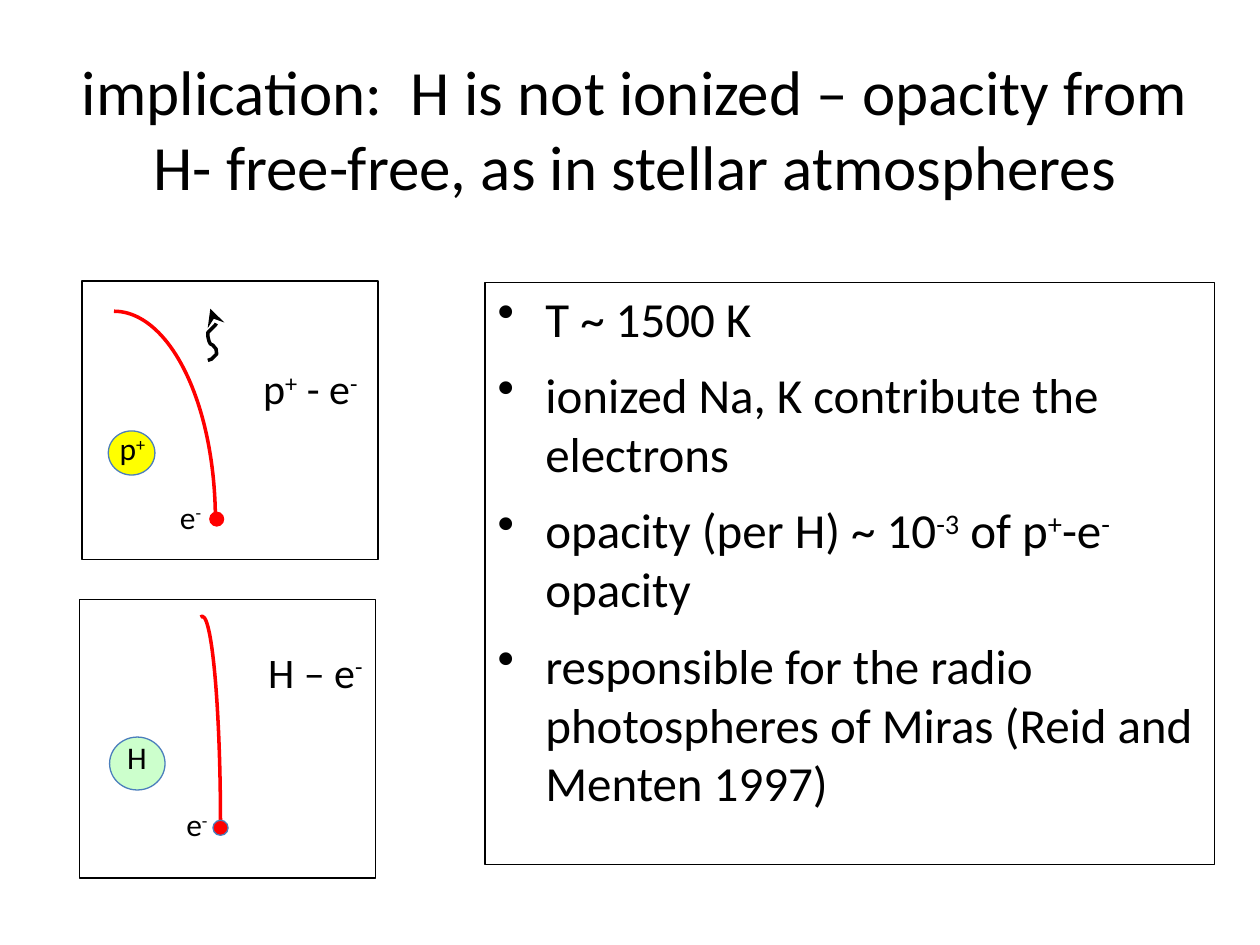
from pptx import Presentation
from pptx.dml.color import RGBColor
from pptx.enum.shapes import MSO_SHAPE as SHAPE
from pptx.enum.text import MSO_ANCHOR as ANCHOR, PP_ALIGN as ALIGN
from pptx.oxml.ns import qn
from pptx.util import Inches, Pt
from lxml.etree import SubElement

COLS, ROWS = 100, 75
BLACK, RED, YELLOW, GREEN, BLUE = "000000", "FF0000", "FFFF00", "CCFFCC", "4B7EBC"


def rgb(color):
    return RGBColor.from_string(color)


class Canvas:
    """Holds the style, the slide and the shape tree being drawn on; lengths are grid cells."""

    font = "Calibri"

    def __init__(self, prs):
        self.cell_w = prs.slide_width / COLS
        self.cell_h = prs.slide_height / ROWS
        self.slide = prs.slides.add_slide(prs.slide_layouts[6])
        self.shapes = self.slide.shapes

    def start_group(self):
        self.shapes = self.slide.shapes.add_group_shape().shapes

    def end_group(self):
        self.shapes = self.slide.shapes

    def at(self, x, y):
        return round(x * self.cell_w), round(y * self.cell_h)

    def style(self, sp, fill=None, line=None, width=0.75):
        sp.shadow.inherit = False
        if fill:
            sp.fill.solid()
            sp.fill.fore_color.rgb = rgb(fill)
        else:
            sp.fill.background()
        if line:
            sp.line.color.rgb = rgb(line)
            sp.line.width = Pt(width)
        else:
            sp.line.fill.background()
        return sp

    def shape(self, kind, box, **style):
        sp = self.shapes.add_shape(kind, *self.at(*box[:2]), *self.at(*box[2:]))
        return self.style(sp, **style)

    def arc(self, box, start, end):
        sp = self.shape(SHAPE.ARC, box, line=RED, width=2)
        sp.adjustments[0], sp.adjustments[1] = start, end

    def wave(self, points):
        """Draws an open line through the points, with a stealth arrowhead at its end."""
        first, *rest = [self.at(*point) for point in points]
        builder = self.shapes.build_freeform(*first)
        builder.add_line_segments(rest, close=False)
        sp = self.style(builder.convert_to_shape(), line=BLACK, width=2)
        ln = sp.line._get_or_add_ln()
        SubElement(ln, qn("a:tailEnd"), type="stealth", w="lg", len="lg")

    def paragraph(self, p, text, size, align=ALIGN.LEFT):
        """Fills a paragraph; every second part between ^ marks is raised."""
        p.alignment = align
        p.font.name, p.font.size = self.font, Pt(size)
        p.font.color.rgb = rgb(BLACK)
        for i, part in enumerate(text.split("^")):
            if part:
                r = p.add_run()
                r.text = part
                if i % 2:
                    r.font._element.set("baseline", "30000")

    def text(self, box, text, size, align=ALIGN.LEFT, anchor=ANCHOR.TOP):
        sp = self.shapes.add_textbox(*self.at(*box[:2]), *self.at(*box[2:]))
        tf = sp.text_frame
        tf.word_wrap, tf.vertical_anchor = True, anchor
        self.paragraph(tf.paragraphs[0], text, size, align)

    def bullets(self, box, items, size):
        sp = self.shape(SHAPE.RECTANGLE, box, line=BLACK)
        tf = sp.text_frame
        tf.word_wrap, tf.vertical_anchor = True, ANCHOR.TOP
        for i, item in enumerate(items):
            p = tf.add_paragraph() if i else tf.paragraphs[0]
            self.paragraph(p, item, size)
            p.space_before = Pt(10)
            pPr = p._p.get_or_add_pPr()
            pPr.set("marL", str(Inches(0.38)))
            pPr.set("indent", str(-Inches(0.38)))
            bullet = pPr.makeelement(qn("a:buChar"), {"char": "•"})
            pPr.find(qn("a:defRPr")).addprevious(bullet)

    def encounter(self, frame, path, nucleus, electron, labels, photon=None):
        """Draws one framed panel of an electron passing a nucleus."""
        self.arc(*path)
        self.start_group()
        for box, fill, line in (nucleus, electron):
            self.shape(SHAPE.OVAL, box, fill=fill, line=line)
        if photon:
            self.wave(photon)
        for box, text, size in labels:
            self.text(box, text, size)
        self.shape(SHAPE.RECTANGLE, frame, line=BLACK)
        self.end_group()


PHOTON = [(16.5, 28.6), (16.8, 28.5), (17.2, 28.1), (17.15, 27.7), (16.9, 27.4),
          (16.7, 27.3), (16.6, 27.1), (16.5, 26.7), (16.5, 26.4), (16.7, 26.2),
          (16.9, 26), (17.1, 25.8), (17.2, 25.6), (17.1, 25.3), (16.8, 24.9), (16.7, 24.5)]

ENCOUNTERS = [
    dict(frame=(6.5, 22.3, 23.5, 22.1),
         path=((1, 24.7, 16.1, 33.2), 162, 215.01),
         nucleus=((8.6, 34.2, 3.7, 3.5), YELLOW, BLUE),
         electron=((16.6, 40.6, 1.2, 1.2), RED, None),
         labels=[((8.5, 33.6, 4.5, 4), "p^+", 18),
                 ((13.3, 39, 3.8, 4), "e^-", 18),
                 ((19.9, 28.3, 11.3, 5), "p^+^ - e^-", 24)],
         photon=PHOTON),
    dict(frame=(6.3, 47.6, 23.5, 22.1),
         path=((14.6, 48.9, 2.9, 33.2), 161.72, 0),
         nucleus=((8.7, 58.5, 4.4, 4.2), GREEN, BLUE),
         electron=((16.9, 65.1, 1.2, 1.2), RED, BLUE),
         labels=[((9.1, 58.1, 4.5, 4), "H", 18),
                 ((13.8, 63.4, 3.8, 4), "e^-", 18),
                 ((20.3, 50.8, 11.9, 5), "H – e^-", 24)]),
]

POINTS = [
    "T ~ 1500 K",
    "ionized Na, K contribute the electrons",
    "opacity (per H) ~ 10^-3^ of p^+^-e^-^ opacity",
    "responsible for the radio photospheres of Miras (Reid and Menten 1997)",
]


def main():
    prs = Presentation()
    prs.slide_width, prs.slide_height = Inches(10), Inches(7.5)
    canvas = Canvas(prs)
    canvas.text((5.1, 3.9, 90.6, 12.5),
                "implication:  H is not ionized – opacity from H- free-free, as in stellar atmospheres",
                36, ALIGN.CENTER, ANCHOR.MIDDLE)
    canvas.bullets((38.5, 22.4, 57.9, 46.2), POINTS, 28)
    for encounter in ENCOUNTERS:
        canvas.encounter(**encounter)
    prs.save("out.pptx")


if __name__ == "__main__":
    main()
